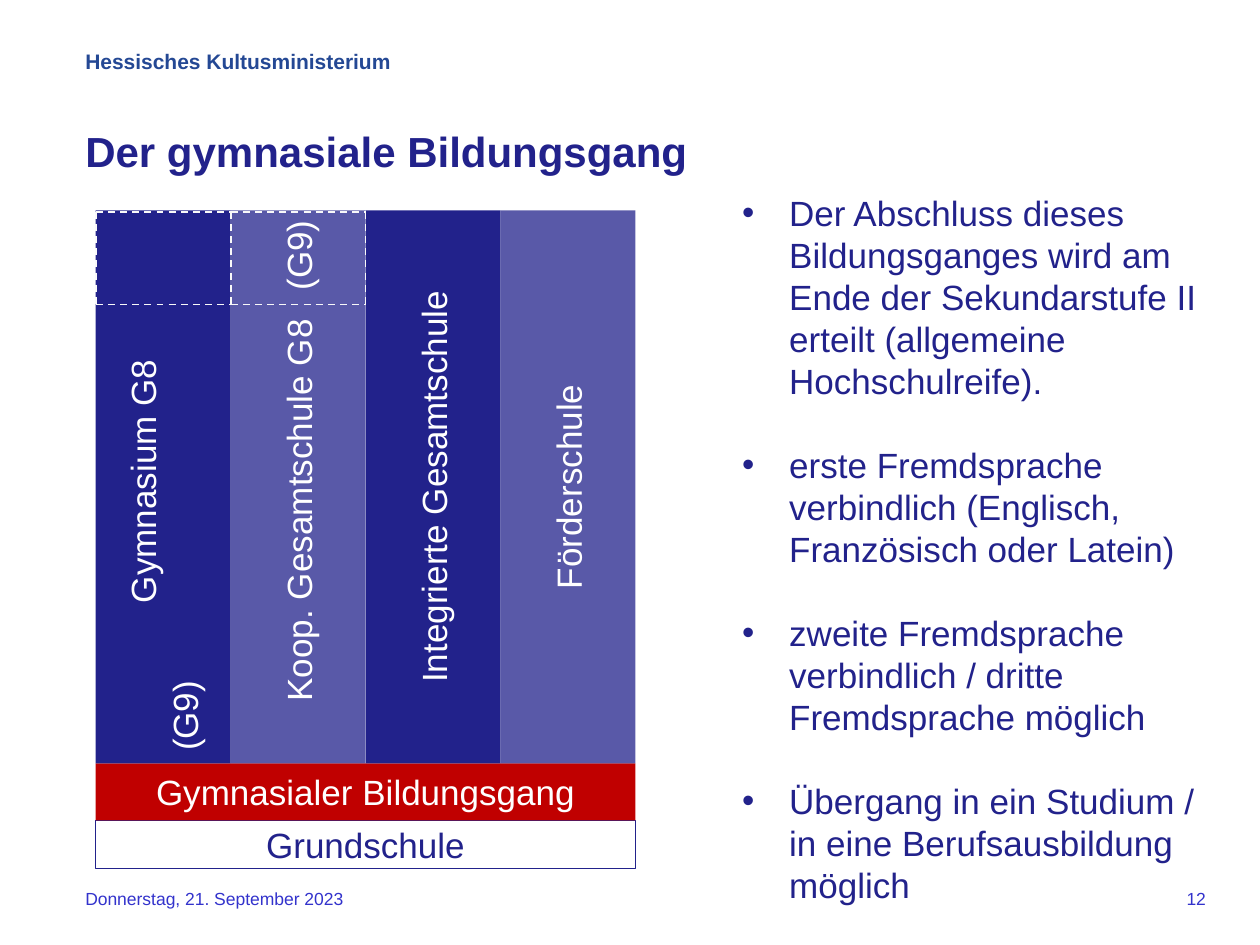
from lxml.etree import SubElement
from pptx import Presentation
from pptx.dml.color import RGBColor
from pptx.enum.dml import MSO_LINE_DASH_STYLE as Dash
from pptx.enum.shapes import MSO_CONNECTOR as Connector, MSO_SHAPE as Shape
from pptx.enum.text import MSO_ANCHOR as Anchor, PP_ALIGN as Align
from pptx.oxml.ns import qn
from pptx.util import Cm, Pt

NAVY, RED, WHITE = "22228B", "C00000", "FFFFFF"
BODY = {"size": Pt(20), "name": "Arial", "bold": False}
SMALL = {**BODY, "size": Pt(10)}
HEADER = {**BODY, "size": Pt(12), "bold": True}
TITLE = {**BODY, "size": Pt(24), "bold": True}

COLUMNS = [
    (["\tGymnasium G8", "\t(G9)"], [[3.23], [0.25]], None),
    (["\tKoop. Gesamtschule G8\t(G9)"], [[1.25, 9.53]], 75),
    (["Integrierte Gesamtschule"], [[]], None),
    (["Förderschule"], [[]], 75),
]
POINTS = [
    "Der Abschluss dieses Bildungsganges wird am Ende der Sekundarstufe II erteilt (allgemeine Hochschulreife).",
    "erste Fremdsprache verbindlich (Englisch, Französisch oder Latein)",
    "zweite Fremdsprache verbindlich / dritte Fremdsprache möglich",
    "Übergang in ein Studium / in eine Berufsausbildung möglich",
]


def colour(value):
    """Turn a hex string into a colour."""
    return RGBColor.from_string(value)


def apply(target, values):
    """Set each attribute named in a dict."""
    for name, value in values.items():
        setattr(target, name, value)


def add_span(para, text, style, ink):
    """Add one styled run to a paragraph."""
    span = para.add_run()
    span.text = text
    apply(span.font, style)
    span.font.color.rgb = colour(ink)


def add_tabs(para, stops):
    """Give a paragraph left tab stops at the given centimetres."""
    tabs = SubElement(para._p.get_or_add_pPr(), qn("a:tabLst"))
    for stop in stops:
        SubElement(tabs, qn("a:tab"), pos=str(Cm(stop)), algn="l")


def add_label(page, box, text, style, ink, align=Align.LEFT):
    """Place a one-paragraph text box."""
    frame = page.shapes.add_textbox(*map(Cm, box)).text_frame
    frame.word_wrap = True
    para = frame.paragraphs[0]
    para.alignment = align
    add_span(para, text, style, ink)


def add_block(page, box, fill, alpha=None, outline=None):
    """Place a rectangle and return its text frame."""
    block = page.shapes.add_shape(Shape.RECTANGLE, *map(Cm, box))
    block.shadow.inherit = False
    block.fill.solid()
    block.fill.fore_color.rgb = colour(fill)
    if alpha:
        shade = block.fill._xPr.find(qn("a:solidFill"))[0]
        SubElement(shade, qn("a:alpha"), val=str(alpha * 1000))
    if outline:
        block.line.color.rgb = colour(outline)
        block.line.width = Pt(0.75)
    else:
        block.line.fill.background()
    apply(block.text_frame, {"word_wrap": True, "vertical_anchor": Anchor.MIDDLE,
                             "margin_left": 0, "margin_right": 0,
                             "margin_top": 0, "margin_bottom": 0})
    return block.text_frame


def add_dash(page, start, end):
    """Draw one dashed line."""
    line = page.shapes.add_connector(Connector.STRAIGHT, *map(Cm, (*start, *end)))
    apply(line.line, {"width": Pt(1), "dash_style": Dash.DASH})
    line.line.color.rgb = colour("F9F9F9")
    SubElement(line._element.spPr, qn("a:effectLst"))


def add_school_diagram(page, left, top, width, height):
    """Draw the school columns standing on the two base bars."""
    base, bar = 0.97, 1.15
    tall = height - base - bar
    step = width / len(COLUMNS)
    bars = [("Grundschule", height - base, base, WHITE, NAVY, NAVY),
            ("Gymnasialer Bildungsgang", tall, bar, RED, WHITE, None)]
    for text, offset, depth, fill, ink, outline in bars:
        frame = add_block(page, (left, top + offset, width, depth), fill, outline=outline)
        frame.paragraphs[0].alignment = Align.CENTER
        add_span(frame.paragraphs[0], text, BODY, ink)
    for index, (lines, tabs, alpha) in enumerate(COLUMNS):
        frame = add_block(page, (left + index * step, top, step, tall), NAVY, alpha)
        frame._txBody.bodyPr.set("vert", "vert270")
        for number, (text, stops) in enumerate(zip(lines, tabs)):
            para = frame.add_paragraph() if number else frame.paragraphs[0]
            para.alignment = Align.LEFT if stops else Align.CENTER
            if stops:
                add_tabs(para, stops)
            add_span(para, text, BODY, WHITE)
    upper, lower = top + 0.03, top + 1.9
    edges = [left + index * step for index in range(3)]
    for start, end in zip(edges, edges[1:]):
        for level in (upper, lower):
            add_dash(page, (start, level), (end, level))
    for edge in edges:
        add_dash(page, (edge, upper), (edge, lower))


def add_points(page, left, top, width, height):
    """Place the bulleted list."""
    frame = page.shapes.add_textbox(*map(Cm, (left, top, width, height))).text_frame
    frame.word_wrap = True
    for index, text in enumerate(POINTS):
        para = frame.add_paragraph() if index else frame.paragraphs[0]
        props = para._p.get_or_add_pPr()
        props.set("marL", str(Cm(0.95)))
        props.set("indent", str(-Cm(0.95)))
        SubElement(props, qn("a:buFont"), typeface="Arial")
        SubElement(props, qn("a:buChar"), char="•")
        apply(para, {"line_spacing": Pt(24), "space_before": Pt(24 if index else 0)})
        add_span(para, text, BODY, NAVY)


def add_frame_texts(page, left, top, width, height):
    """Place header, title, date and page number."""
    foot = top + height - 0.85
    add_label(page, (left, top, 8.05, 1.27), "Hessisches Kultusministerium", HEADER, "244894")
    add_label(page, (left, top + 1.55, 21.6, 1.3), "Der gymnasiale Bildungsgang", TITLE, NAVY)
    add_label(page, (left, foot, 8.2, 0.85), "Donnerstag, 21. September 2023", SMALL, "3333CC")
    add_label(page, (left + width - 6.35, foot, 6.35, 0.85), "12", SMALL, "3333CC", Align.RIGHT)


def main():
    """Build and save the slide."""
    deck = Presentation()
    apply(deck, {"slide_width": Cm(25.4), "slide_height": Cm(19.05)})
    page = deck.slides.add_slide(deck.slide_layouts[6])
    add_frame_texts(page, 1.47, 0.86, 23.09, 17.77)
    add_school_diagram(page, 1.93, 4.24, 10.88, 13.27)
    add_points(page, 14.71, 3.73, 9.8, 14.78)
    deck.save("out.pptx")


if __name__ == "__main__":
    main()
